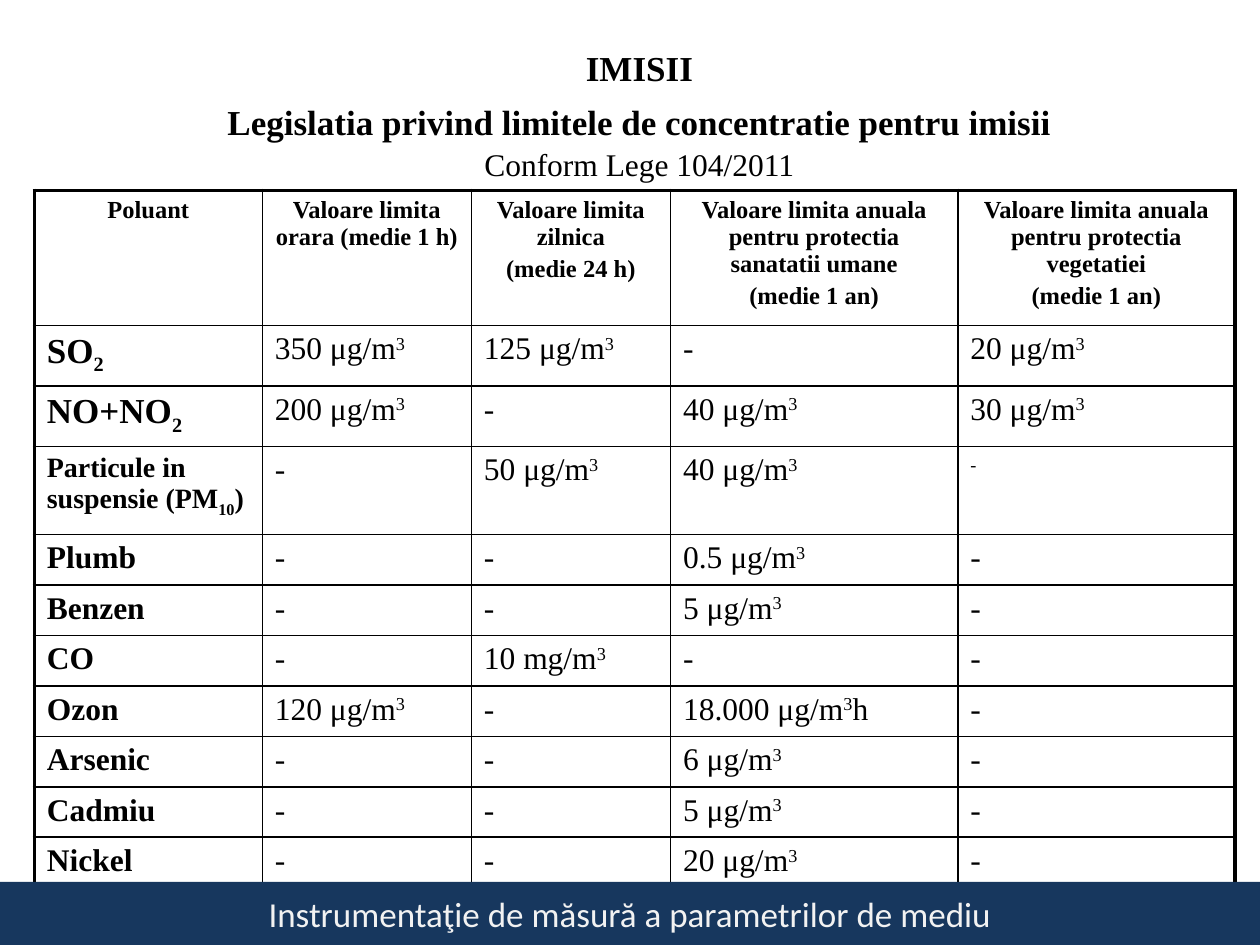
from lxml.etree import SubElement
from pptx import Presentation
from pptx.dml.color import RGBColor
from pptx.enum.shapes import MSO_SHAPE
from pptx.enum.text import MSO_ANCHOR, MSO_AUTO_SIZE, PP_ALIGN
from pptx.oxml.ns import qn
from pptx.util import Pt

THEME = {
    "serif": "Times New Roman", "sans": "Calibri",
    "ink": "000000", "bar": "17375E", "bar_text": "F2F2F2",
    "title": 20, "body": 18, "header": 14, "thin": 1, "thick": 2.25,
}
TITLE = "IMISII"
SUBTITLE = "Legislatia privind limitele de concentratie pentru imisii"
LAW = "Conform Lege 104/2011"
FOOTER = "Instrumentaţie de măsură a parametrilor de mediu"

# In the texts below, "|" parts runs; "^" raises a run and "_" lowers it.
HEADERS = [
    "Poluant",
    "Valoare limita orara (medie 1 h)",
    "Valoare limita zilnica\n(medie 24 h)",
    "Valoare limita anuala pentru protectia sanatatii umane\n(medie 1 an)",
    "Valoare limita anuala pentru protectia vegetatiei\n(medie 1 an)",
]
LIMITS = [
    ["SO|_2", "350 μg/m|^3", "125 μg/m|^3", "-", "20 μg/m|^3"],
    ["NO+NO|_2", "200 μg/m|^3", "-", "40 μg/m|^3", "30 μg/m|^3"],
    ["Particule in suspensie (PM|_10|)", "-", "50 μg/m|^3", "40 μg/m|^3", "^-"],
    ["Plumb", "-", "-", "0.5 μg/m|^3", "-"],
    ["Benzen", "-", "-", "5 μg/m|^3", "-"],
    ["CO", "-", "10 mg/m|^3", "-", "-"],
    ["Ozon", "120 μg/m|^3", "-", "18.000 μg/m|^3|h", "-"],
    ["Arsenic", "-", "-", "6 μg/m|^3", "-"],
    ["Cadmiu", "-", "-", "5 μg/m|^3", "-"],
    ["Nickel", "-", "-", "20 μg/m|^3", "-"],
]
NAME_SIZES = [20, 20, 16] + [THEME["body"]] * 7
COL_WIDTHS = [130.3, 119.5, 113.8, 164.2, 158.4]
ROW_HEIGHTS = [77, 34.6, 34.6, 50.3] + [28.85] * 7
BASELINES = {"^": "30000", "_": "-25000"}


def write(tf, text, size, bold=False, align=PP_ALIGN.LEFT, font="serif", color="ink"):
    for i, line in enumerate(text.split("\n")):
        p = tf.paragraphs[0] if i == 0 else tf.add_paragraph()
        p.alignment = align
        p.space_before = Pt(0.2 * size if i else 0)
        for part in line.split("|"):
            r = p.add_run()
            r.text = part.lstrip("^_")
            r.font.name = THEME[font]
            r.font.size = Pt(size)
            r.font.bold = bold
            r.font.color.rgb = RGBColor.from_string(THEME[color])
            if part[0] in BASELINES:
                r.font._element.set("baseline", BASELINES[part[0]])


def place(sp, left, top, width, height):
    sp.left, sp.top, sp.width, sp.height = Pt(left), Pt(top), Pt(width), Pt(height)


def heading(sp, text, top, height, size, bold):
    place(sp, 25.2, top, 680.4, height)
    tf = sp.text_frame
    tf.word_wrap = True
    tf.auto_size = MSO_AUTO_SIZE.SHAPE_TO_FIT_TEXT
    tf.vertical_anchor = MSO_ANCHOR.TOP
    write(tf, text, size, bold, PP_ALIGN.CENTER)


def set_borders(cell, widths):
    tcPr = cell._tc.get_or_add_tcPr()
    for i, (side, width) in enumerate(widths.items()):
        ln = SubElement(tcPr, qn("a:ln" + side), w=str(int(Pt(width))))
        fill = SubElement(ln, qn("a:solidFill"))
        SubElement(fill, qn("a:srgbClr"), val=THEME["ink"])
        tcPr.insert(i, ln)


def add_limits_table(s):
    rows, cols = len(ROW_HEIGHTS), len(COL_WIDTHS)
    frame = s.shapes.add_table(rows, cols, Pt(19.6), Pt(108.7),
                               Pt(sum(COL_WIDTHS)), Pt(sum(ROW_HEIGHTS)))
    table = frame.table
    table.first_row = table.horz_banding = False
    for col, width in zip(table.columns, COL_WIDTHS):
        col.width = Pt(width)
    for row, height in zip(table.rows, ROW_HEIGHTS):
        row.height = Pt(height)
    thin, thick = THEME["thin"], THEME["thick"]
    for r, texts in enumerate([HEADERS] + LIMITS):
        for c, text in enumerate(texts):
            cell = table.cell(r, c)
            cell.fill.background()
            if r == 0:
                write(cell.text_frame, text, THEME["header"], True, PP_ALIGN.CENTER)
            else:
                size = NAME_SIZES[r - 1] if c == 0 else THEME["body"]
                write(cell.text_frame, text, size, c == 0)
            set_borders(cell, {
                "L": thick if c == 0 else thin,
                "R": thick if c == cols - 1 else thin,
                "T": thick if r == 0 else thin,
                "B": thin,
            })


def add_footer(s):
    sp = s.shapes.add_shape(MSO_SHAPE.RECTANGLE, Pt(0), Pt(504), Pt(720), Pt(36))
    sp.shadow.inherit = False
    sp.fill.solid()
    sp.fill.fore_color.rgb = RGBColor.from_string(THEME["bar"])
    sp.line.fill.background()
    sp.text_frame.vertical_anchor = MSO_ANCHOR.MIDDLE
    write(sp.text_frame, FOOTER, THEME["title"], False, PP_ALIGN.CENTER, "sans", "bar_text")


def main():
    prs = Presentation()
    prs.slide_width, prs.slide_height = Pt(720), Pt(540)
    s = prs.slides.add_slide(prs.slide_layouts[5])
    heading(s.shapes.title, TITLE, 23, 31, THEME["title"], True)
    for text, top, height, size, bold in [
        (SUBTITLE, 54, 31, THEME["title"], True),
        (LAW, 79.2, 28.8, THEME["body"], False),
    ]:
        sp = s.shapes.add_textbox(0, 0, 0, 0)
        heading(sp, text, top, height, size, bold)
    add_limits_table(s)
    add_footer(s)
    prs.save("out.pptx")


if __name__ == "__main__":
    main()
